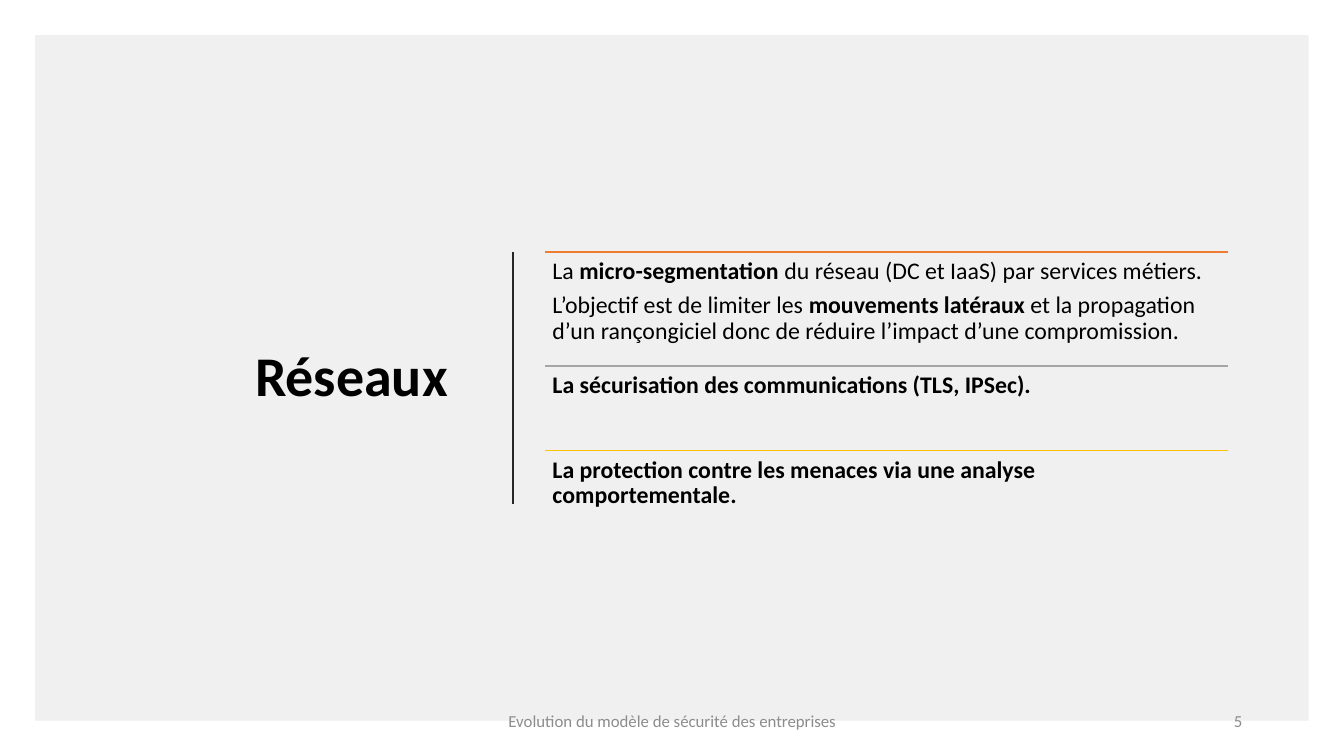
from lxml.etree import SubElement
from pptx import Presentation
from pptx.dml.color import RGBColor
from pptx.enum.shapes import MSO_CONNECTOR, MSO_SHAPE
from pptx.enum.text import MSO_ANCHOR, PP_ALIGN
from pptx.oxml.ns import qn
from pptx.util import Inches, Pt

FONT = "Calibri"
BLACK = "000000"
FOOTER_GREY = "8C8C8C"
POINTS_LEFT, POINTS_WIDTH = 5.41, 6.77

POINTS = [
    (2.5, 1.13, "ED7D31", [
        [("La ", False), ("micro-segmentation", True),
         (" du réseau (DC et IaaS) par services métiers.", False)],
        [("L’objectif est de limiter les ", False), ("mouvements latéraux", True),
         (" et la propagation d’un rançongiciel donc de réduire l’impact d’une compromission.", False)],
    ]),
    (3.63, 0.84, "A5A5A5", [[("La sécurisation des communications (TLS, IPSec).", True)]]),
    (4.47, 1.36, "FFC000", [
        [("La protection contre les menaces via une analyse comportementale.", True)],
    ]),
]


def color(value):
    return RGBColor.from_string(value)


def set_format(target, values):
    for name, value in values.items():
        setattr(target, name, value)


def add_panel(slide, box, fill, opacity):
    panel = slide.shapes.add_shape(MSO_SHAPE.RECTANGLE, *map(Inches, box))
    panel.shadow.inherit = False
    panel.fill.solid()
    panel.fill.fore_color.rgb = color(fill)
    panel.line.fill.background()
    fill_color = panel.fill._xPr.find(qn("a:solidFill"))[0]
    SubElement(fill_color, qn("a:alpha")).set("val", str(opacity * 1000))


def add_line(slide, start, end, line_color, width):
    points = map(Inches, (*start, *end))
    connector = slide.shapes.add_connector(MSO_CONNECTOR.STRAIGHT, *points)
    connector.line.color.rgb = color(line_color)
    connector.line.width = Pt(width)
    SubElement(connector._element.spPr, qn("a:effectLst"))


def add_text(slide, box, paragraphs, size, text_color, frame_format, paragraph_format):
    frame = slide.shapes.add_textbox(*map(Inches, box)).text_frame
    set_format(frame, {"word_wrap": True, **frame_format})
    for index, runs in enumerate(paragraphs):
        paragraph = frame.add_paragraph() if index else frame.paragraphs[0]
        set_format(paragraph, paragraph_format)
        for text, bold in runs:
            run = paragraph.add_run()
            run.text = text
            set_format(run.font, {"name": FONT, "size": Pt(size), "bold": bold})
            run.font.color.rgb = color(text_color)


def add_point(slide, top, height, line_color, paragraphs):
    right = POINTS_LEFT + POINTS_WIDTH
    add_line(slide, (POINTS_LEFT, top), (right, top), line_color, 1)
    margins = {f"margin_{side}": Inches(0.07) for side in ("left", "top", "right", "bottom")}
    add_text(slide, (POINTS_LEFT, top, POINTS_WIDTH, height), paragraphs, 17, BLACK,
             margins, {"line_spacing": 0.9, "space_after": Pt(6)})


def main():
    presentation = Presentation()
    set_format(presentation, {"slide_width": Inches(13.33), "slide_height": Inches(7.5)})
    slide = presentation.slides.add_slide(presentation.slide_layouts[6])
    middle = {"vertical_anchor": MSO_ANCHOR.MIDDLE}

    add_panel(slide, (0.35, 0.35, 12.63, 6.8), "E7E6E6", 60)
    add_text(slide, (0.92, 1.17, 3.62, 5.17), [[("Réseaux", True)]], 40, BLACK,
             middle, {"alignment": PP_ALIGN.RIGHT, "line_spacing": 0.9})
    add_line(slide, (5.09, 2.5), (5.09, 5), "262626", 1.5)
    for point in POINTS:
        add_point(slide, *point)
    add_text(slide, (4.42, 6.95, 4.5, 0.4),
             [[("Evolution du modèle de sécurité des entreprises", False)]],
             12, FOOTER_GREY, middle, {"alignment": PP_ALIGN.CENTER})
    add_text(slide, (9.42, 6.95, 3, 0.4), [[("5", False)]],
             12, FOOTER_GREY, middle, {"alignment": PP_ALIGN.RIGHT})
    presentation.save("out.pptx")


if __name__ == "__main__":
    main()
